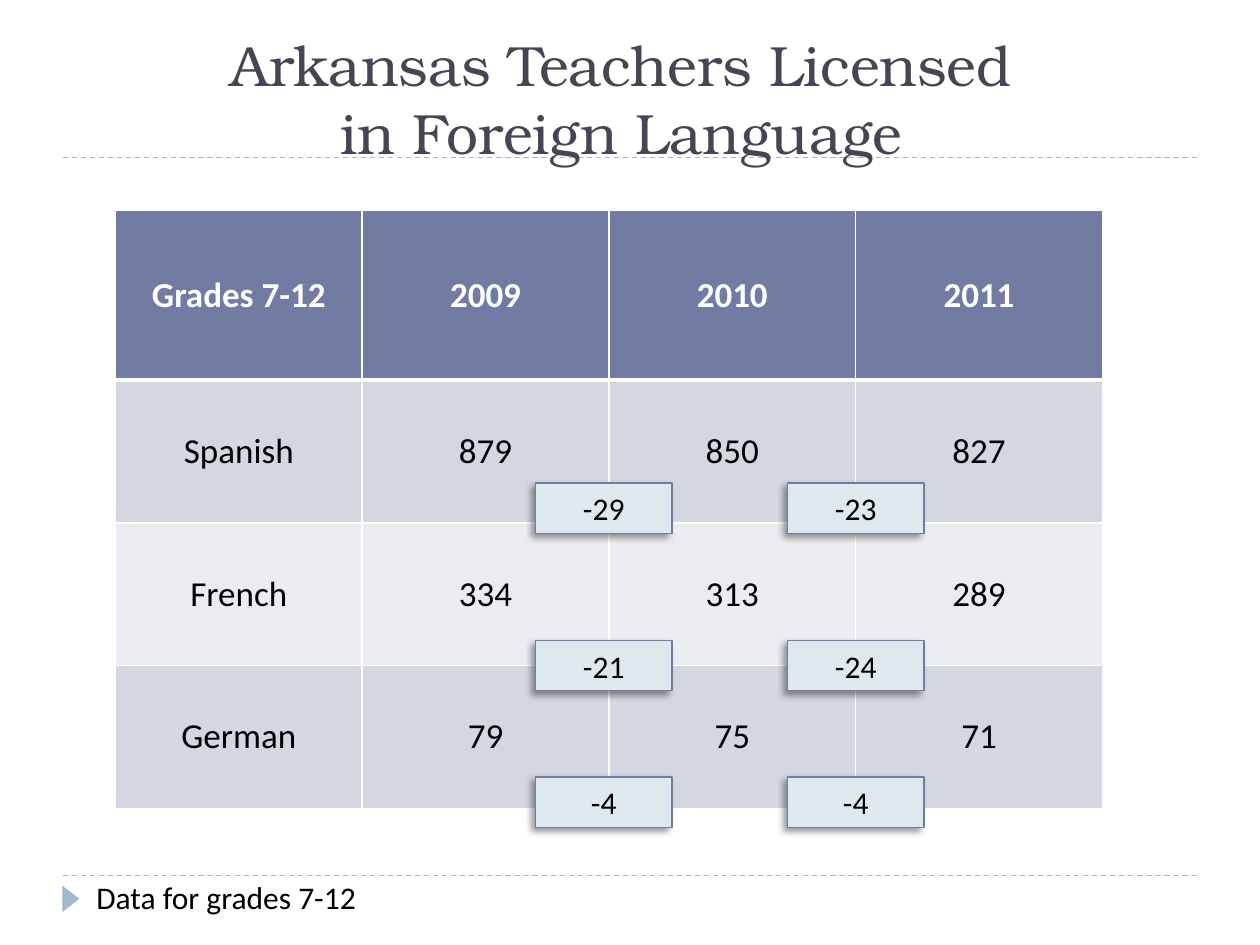
import pptx
import pptx.util
import pptx.dml.color
import pptx.enum.dml
import pptx.enum.shapes
import pptx.enum.text
import pptx.oxml
import pptx.oxml.ns

RGB = pptx.dml.color.RGBColor
ALIGN = pptx.enum.text.PP_ALIGN
ANCHOR = pptx.enum.text.MSO_ANCHOR
SHAPE = pptx.enum.shapes.MSO_SHAPE

INK = RGB(0x46, 0x46, 0x53)
BLACK = RGB(0x00, 0x00, 0x00)
WHITE = RGB(0xFF, 0xFF, 0xFF)
SLATE = RGB(0x72, 0x7C, 0xA3)
SKY = RGB(0x9F, 0xB8, 0xCD)
PALE = RGB(0xDD, 0xE9, 0xEC)
BAND_DARK = RGB(0xD5, 0xD7, 0xE0)
BAND_LIGHT = RGB(0xEB, 0xEC, 0xF0)

PX_PER_INCH = 120
NS = pptx.oxml.ns.nsdecls("a")

ROWS = [
    ["Grades 7-12", "2009", "2010", "2011"],
    ["Spanish", "879", "850", "827"],
    ["French", "334", "313", "289"],
    ["German", "79", "75", "71"],
]
CHANGES = [["-29", "-23"], ["-21", "-24"], ["-4", "-4"]]


def px(n):
    return pptx.util.Emu(n * 914400 // PX_PER_INCH)


def box_px(box):
    return [px(n) for n in box]


def write(tf, text, size=18, font="Calibri", color=BLACK, bold=False,
          align=ALIGN.CENTER, anchor=None):
    p = tf.paragraphs[0]
    p.text = text
    p.alignment = align
    for r in p.runs:
        r.font.size = pptx.util.Pt(size)
        r.font.name = font
        r.font.bold = bold
        r.font.color.rgb = color
    if anchor is not None:
        tf.vertical_anchor = anchor


def add_rule(s, x, y, w):
    line = s.shapes.add_connector(
        pptx.enum.shapes.MSO_CONNECTOR.STRAIGHT, px(x), px(y), px(x + w), px(y))
    line.line.color.rgb = SKY
    line.line.width = pptx.util.Pt(0.75)
    line.line.dash_style = pptx.enum.dml.MSO_LINE.DASH
    line.element.spPr.append(pptx.oxml.parse_xml(f"<a:effectLst {NS}/>"))


def add_frame(s, box):
    x, y, w, h = box
    add_rule(s, x, y + h, w)
    add_rule(s, x, y, w)
    marker = s.shapes.add_shape(
        SHAPE.ISOSCELES_TRIANGLE, *box_px((x - 5, y + h + 14, 25, 16)))
    marker.rotation = 90
    marker.shadow.inherit = False
    marker.fill.solid()
    marker.fill.fore_color.rgb = SKY
    marker.line.fill.background()


def add_title(s, box):
    sp = s.shapes.title
    sp.element.getparent().append(sp.element)
    sp.left, sp.top, sp.width, sp.height = box_px(box)
    tf = sp.text_frame
    tf.word_wrap = True
    tf.auto_size = pptx.enum.text.MSO_AUTO_SIZE.NONE
    tf.margin_bottom = px(40)
    write(tf, "Arkansas Teachers Licensed \vin Foreign Language ", size=32.4,
          font="TeX Gyre Bonum", color=INK, anchor=ANCHOR.MIDDLE)


def add_note(s, box):
    tf = s.shapes.add_textbox(*box_px(box)).text_frame
    tf.word_wrap = True
    write(tf, "Data for grades 7-12", align=ALIGN.LEFT)


def set_borders(cell, bottom, top):
    tcPr = cell._tc.get_or_add_tcPr()
    widths = {"L": 1, "R": 1, "T": top, "B": bottom}
    for i, (side, width) in enumerate(widths.items()):
        tcPr.insert(i, pptx.oxml.parse_xml(
            f'<a:ln{side} {NS} w="{width * 12700}"><a:solidFill>'
            f'<a:srgbClr val="{WHITE}"/></a:solidFill></a:ln{side}>'))


def add_licence_table(s, box, header_h):
    x, y, w, h = box
    table = s.shapes.add_table(len(ROWS), len(ROWS[0]), *box_px(box)).table
    table.horz_banding = False
    for col in table.columns:
        col.width = px(w // len(ROWS[0]))
    for i, values in enumerate(ROWS):
        header = i == 0
        table.rows[i].height = px(header_h if header else (h - header_h) // (len(ROWS) - 1))
        fill = SLATE if header else (BAND_DARK if i % 2 else BAND_LIGHT)
        for j, value in enumerate(values):
            cell = table.cell(i, j)
            cell.fill.solid()
            cell.fill.fore_color.rgb = fill
            cell.vertical_anchor = ANCHOR.MIDDLE
            write(cell.text_frame, value, size=20, bold=header,
                  color=WHITE if header else BLACK)
            set_borders(cell, bottom=3 if header else 1, top=3 if i == 1 else 1)


def add_change(s, box, text):
    sp = s.shapes.add_shape(SHAPE.RECTANGLE, *box_px(box))
    sp.fill.solid()
    sp.fill.fore_color.rgb = PALE
    sp.line.color.rgb = SLATE
    sp.line.width = pptx.util.Pt(0.75)
    sp.shadow.inherit = False
    effects = sp.element.spPr.find(pptx.oxml.ns.qn("a:effectLst"))
    effects.append(pptx.oxml.parse_xml(
        f'<a:outerShdw {NS} blurRad="50800" dist="38100" dir="8100000" algn="tr" '
        'rotWithShape="0"><a:srgbClr val="000000"><a:alpha val="40000"/>'
        '</a:srgbClr></a:outerShdw>'))
    write(sp.text_frame, text, anchor=ANCHOR.MIDDLE)


def add_changes(s, box):
    x, y, w, h = box
    for dy, values in zip((0, 150, 280), CHANGES):
        for j, value in enumerate(values):
            add_change(s, (x + j * (w - 130), y + dy, 130, h - 280), value)


def main():
    prs = pptx.Presentation()
    prs.slide_width, prs.slide_height = px(1200), px(900)
    s = prs.slides.add_slide(prs.slide_layouts[5])
    add_frame(s, (60, 150, 1080, 684))
    add_title(s, (60, 50, 1080, 120))
    add_note(s, (80, 830, 1100, 48))
    add_licence_table(s, (110, 200, 940, 570), 162)
    add_changes(s, (510, 460, 370, 328))
    prs.save("out.pptx")


if __name__ == "__main__":
    main()
